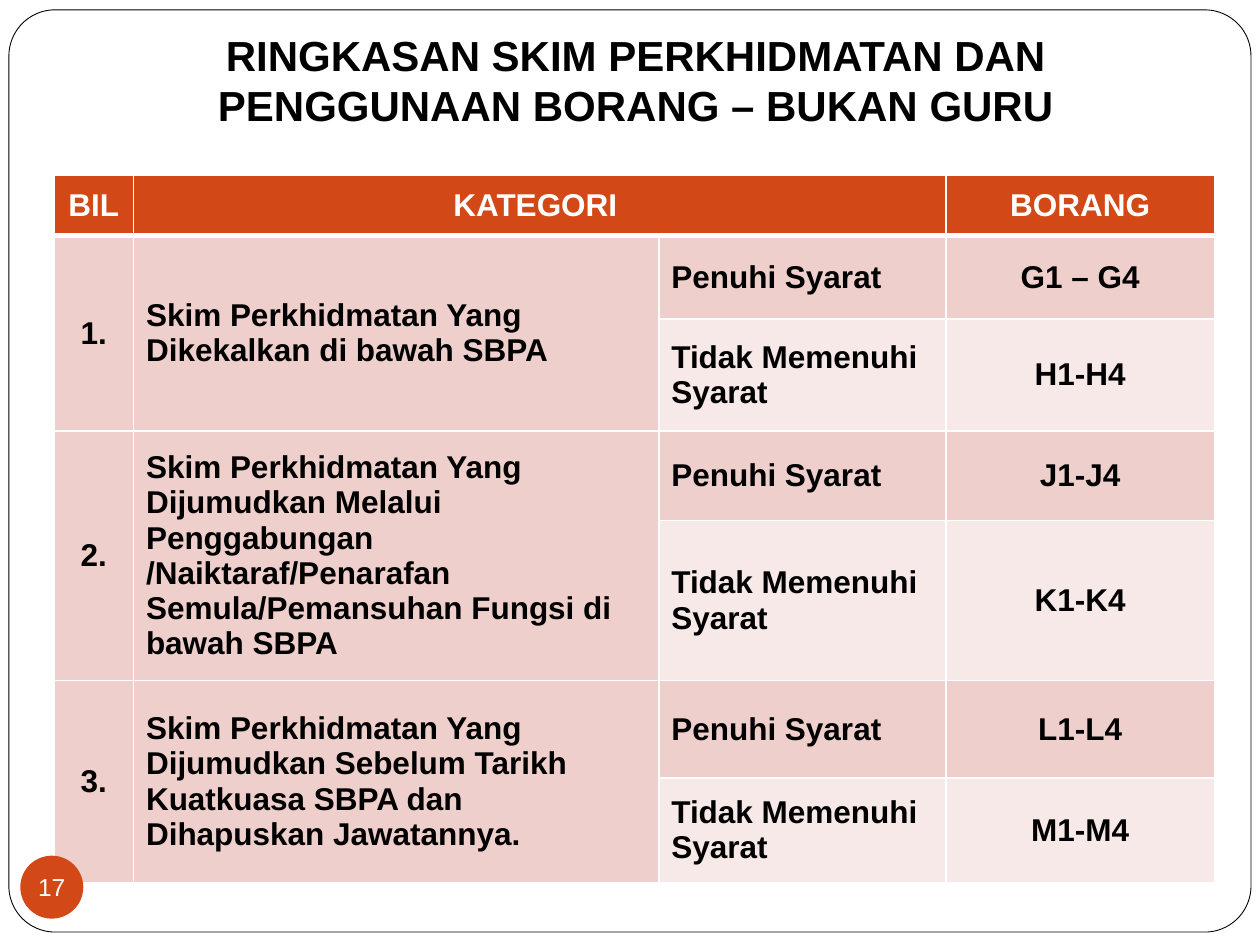
from dataclasses import dataclass

from lxml.etree import SubElement
from pptx import Presentation
from pptx.dml.color import RGBColor
from pptx.enum.shapes import MSO_SHAPE
from pptx.enum.text import MSO_ANCHOR, PP_ALIGN
from pptx.oxml.ns import qn
from pptx.util import Cm, Pt


@dataclass(frozen=True)
class Theme:
    font: str = "Arial"
    white: RGBColor = RGBColor(0xFF, 0xFF, 0xFF)
    black: RGBColor = RGBColor(0, 0, 0)
    accent: RGBColor = RGBColor(0xD3, 0x48, 0x17)
    dark_band: RGBColor = RGBColor(0xEF, 0xCF, 0xCC)
    light_band: RGBColor = RGBColor(0xF7, 0xE9, 0xE8)
    title_size: Pt = Pt(24)
    table_size: Pt = Pt(18)
    number_size: Pt = Pt(14)


THEME = Theme()
TITLE = "RINGKASAN SKIM PERKHIDMATAN DAN PENGGUNAAN BORANG – BUKAN GURU"
CONDITIONS = ("Penuhi Syarat", "Tidak Memenuhi Syarat")
SCHEMES = [
    ("Skim Perkhidmatan Yang Dikekalkan di bawah SBPA", ("G1 – G4", "H1-H4")),
    ("Skim Perkhidmatan Yang Dijumudkan Melalui Penggabungan "
     "/Naiktaraf/Penarafan Semula/Pemansuhan Fungsi di bawah SBPA",
     ("J1-J4", "K1-K4")),
    ("Skim Perkhidmatan Yang Dijumudkan Sebelum Tarikh Kuatkuasa SBPA "
     "dan Dihapuskan Jawatannya.", ("L1-L4", "M1-M4")),
]
COLUMN_WIDTHS = (1.6, 10.59, 5.79, 5.41)
ROW_HEIGHTS = (1.22, 1.68, 2.26, 1.8, 3.23, 1.96, 2.11)


def write(frame, text, size, color, bold=True, align=PP_ALIGN.CENTER):
    frame.text = text
    para = frame.paragraphs[0]
    para.alignment = align
    for span in para.runs:
        span.font.name = THEME.font
        span.font.size = size
        span.font.bold = bold
        span.font.color.rgb = color


def add_plain_shape(page, kind, box, fill):
    shape = page.shapes.add_shape(kind, *map(Cm, box))
    shape.shadow.inherit = False
    shape.fill.solid()
    shape.fill.fore_color.rgb = fill
    shape.line.fill.background()
    return shape


def add_frame(page, box):
    frame = add_plain_shape(page, MSO_SHAPE.ROUNDED_RECTANGLE, box, THEME.white)
    frame.adjustments[0] = 0.05
    frame.line.color.rgb = THEME.black
    frame.line.width = Pt(0.5)


def add_title(page, box):
    frame = page.shapes.add_textbox(*map(Cm, box)).text_frame
    frame.word_wrap = True
    frame.vertical_anchor = MSO_ANCHOR.BOTTOM
    frame.margin_bottom = Cm(0.25)
    write(frame, TITLE, THEME.title_size, THEME.black)


def set_borders(cell, bottom_width):
    """Draw white borders; they must come before the fill in the cell XML."""
    properties = cell._tc.get_or_add_tcPr()
    widths = {"a:lnL": 1, "a:lnR": 1, "a:lnT": 1, "a:lnB": bottom_width}
    for tag, width in widths.items():
        line = SubElement(properties, qn(tag), w=str(Pt(width)))
        fill = SubElement(line, qn("a:solidFill"))
        SubElement(fill, qn("a:srgbClr"), val=str(THEME.white))


def fill_cell(cell, text, fill, color=THEME.black, align=PP_ALIGN.CENTER):
    cell.vertical_anchor = MSO_ANCHOR.MIDDLE
    cell.fill.solid()
    cell.fill.fore_color.rgb = fill
    write(cell.text_frame, text, THEME.table_size, color, align=align)


def add_scheme_table(page, left, top):
    table = page.shapes.add_table(
        len(ROW_HEIGHTS), len(COLUMN_WIDTHS), Cm(left), Cm(top),
        Cm(sum(COLUMN_WIDTHS)), Cm(sum(ROW_HEIGHTS))).table
    for column, width in zip(table.columns, COLUMN_WIDTHS):
        column.width = Cm(width)
    for index, (row, height) in enumerate(zip(table.rows, ROW_HEIGHTS)):
        row.height = Cm(height)
        for cell in row.cells:
            set_borders(cell, 1 if index else 3)

    table.cell(0, 1).merge(table.cell(0, 2))
    for column, heading in ((0, "BIL"), (1, "KATEGORI "), (3, "BORANG")):
        fill_cell(table.cell(0, column), heading, THEME.accent, THEME.white)

    bands = (THEME.dark_band, THEME.light_band)
    for number, (scheme, forms) in enumerate(SCHEMES, start=1):
        first = 2 * number - 1
        for column in (0, 1):
            table.cell(first, column).merge(table.cell(first + 1, column))
        fill_cell(table.cell(first, 0), f"{number}.", THEME.dark_band)
        fill_cell(table.cell(first, 1), scheme, THEME.dark_band,
                  align=PP_ALIGN.LEFT)
        for row, (condition, form, band) in enumerate(
                zip(CONDITIONS, forms, bands), start=first):
            fill_cell(table.cell(row, 2), condition, band, align=PP_ALIGN.LEFT)
            fill_cell(table.cell(row, 3), form, band)


def add_page_number(page, box, number):
    badge = add_plain_shape(page, MSO_SHAPE.OVAL, box, THEME.accent)
    frame = badge.text_frame
    frame.margin_left = frame.margin_right = 0
    frame.margin_top = frame.margin_bottom = 0
    frame.word_wrap = False
    frame.vertical_anchor = MSO_ANCHOR.MIDDLE
    write(frame, str(number), THEME.number_size, THEME.white, bold=False)


def main():
    deck = Presentation()
    deck.slide_width, deck.slide_height = Cm(25.4), Cm(19.05)
    page = deck.slides.add_slide(deck.slide_layouts[6])
    add_frame(page, (0.18, 0.2, 25.04, 18.59))
    add_title(page, (1.5, 0.91, 22.63, 1.96))
    add_scheme_table(page, 1.09, 3.53)
    add_page_number(page, (0.41, 17.25, 1.27, 1.27), 17)
    deck.save("out.pptx")


if __name__ == "__main__":
    main()
